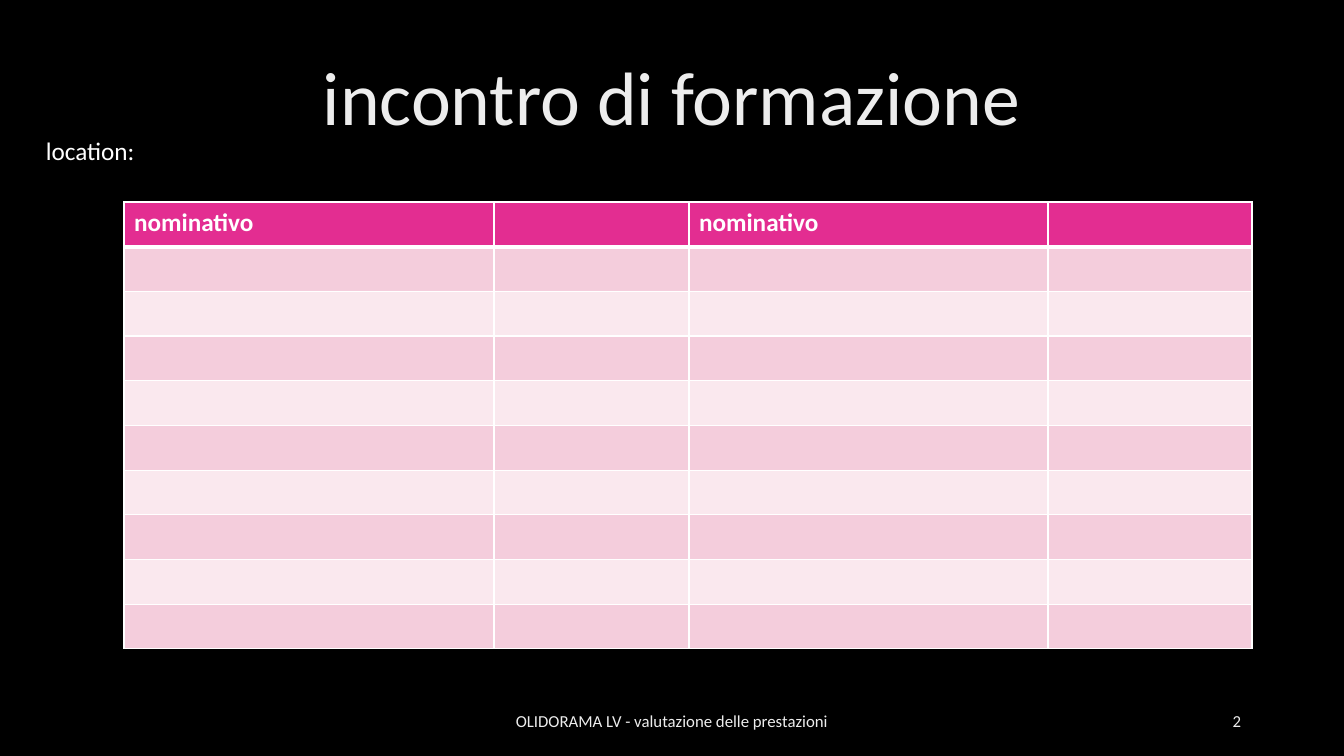
"""Build the training meeting slide with its attendance table."""
from lxml.etree import SubElement
from pptx import Presentation
from pptx.dml.color import RGBColor as RGB
from pptx.enum.text import MSO_ANCHOR as ANC, PP_ALIGN as AL
from pptx.oxml.ns import qn
from pptx.util import Pt

INK = {"back": "000000", "soft": "EDEDED", "white": "FFFFFF",
       "head": "E32D91", "odd": "F4CDDC", "even": "FAE8EE"}
FONT = "Calibri"
TEXTS = [
    ("incontro di formazione", (92, 40, 1159, 122), 54, "soft", AL.CENTER, ANC.MIDDLE, 0.9),
    ("OLIDORAMA LV - valutazione delle prestazioni", (445, 701, 454, 40), 12, "soft", AL.CENTER, ANC.MIDDLE, 1),
    ("2", (949, 701, 302, 40), 12, "soft", AL.RIGHT, ANC.MIDDLE, 1),
    ("location:", (36, 130, 307, 40), 18, "white", AL.LEFT, ANC.TOP, 1),
]
HEADS = ["nominativo", "", "nominativo", ""]
COLS = [370, 195, 359, 204]
ROWS = 10
LEFT, TOP, HIGH = 124, 202, 447
SCALE = 914400 / 100.8


def px(n):
    return round(n * SCALE)


def add_run(para, text, size, ink, bold=False):
    run = para.add_run()
    run.text = text
    font = run.font
    font.name, font.size, font.bold = FONT, Pt(size), bold
    font.color.rgb = RGB.from_string(INK[ink])


def add_text(slide, text, box, size, ink, align, anchor, lead):
    frame = slide.shapes.add_textbox(*map(px, box)).text_frame
    frame.word_wrap = True
    frame.vertical_anchor = anchor
    para = frame.paragraphs[0]
    para.alignment, para.line_spacing = align, lead
    add_run(para, text, size, ink)


def set_edges(cell, row):
    props = cell._tc.get_or_add_tcPr()
    wide = {"T": 3 if row == 1 else 1, "B": 3 if row == 0 else 1}
    for i, side in enumerate("LRTB"):
        line = SubElement(props, qn("a:ln" + side), w=str(Pt(wide.get(side, 1))))
        fill = SubElement(line, qn("a:solidFill"))
        SubElement(fill, qn("a:srgbClr"), val=INK["white"])
        props.insert(i, line)


def add_grid(slide):
    box = map(px, (LEFT, TOP, sum(COLS), HIGH))
    table = slide.shapes.add_table(ROWS, len(COLS), *box).table
    for col, wide in zip(table.columns, COLS):
        col.width = px(wide)
    for r, row in enumerate(table.rows):
        row.height = px(HIGH / ROWS)
        tone = "head" if r == 0 else "odd" if r % 2 else "even"
        for cell in row.cells:
            cell.fill.solid()
            cell.fill.fore_color.rgb = RGB.from_string(INK[tone])
            set_edges(cell, r)
    for c, text in enumerate(HEADS):
        if text:
            add_run(table.cell(0, c).text_frame.paragraphs[0], text, 18, "white", True)


def main():
    deck = Presentation()
    deck.slide_width, deck.slide_height = px(1344), px(756)
    slide = deck.slides.add_slide(deck.slide_layouts[6])
    back = slide.background.fill
    back.solid()
    back.fore_color.rgb = RGB.from_string(INK["back"])
    add_grid(slide)
    for item in TEXTS:
        add_text(slide, *item)
    deck.save("out.pptx")


if __name__ == "__main__":
    main()
